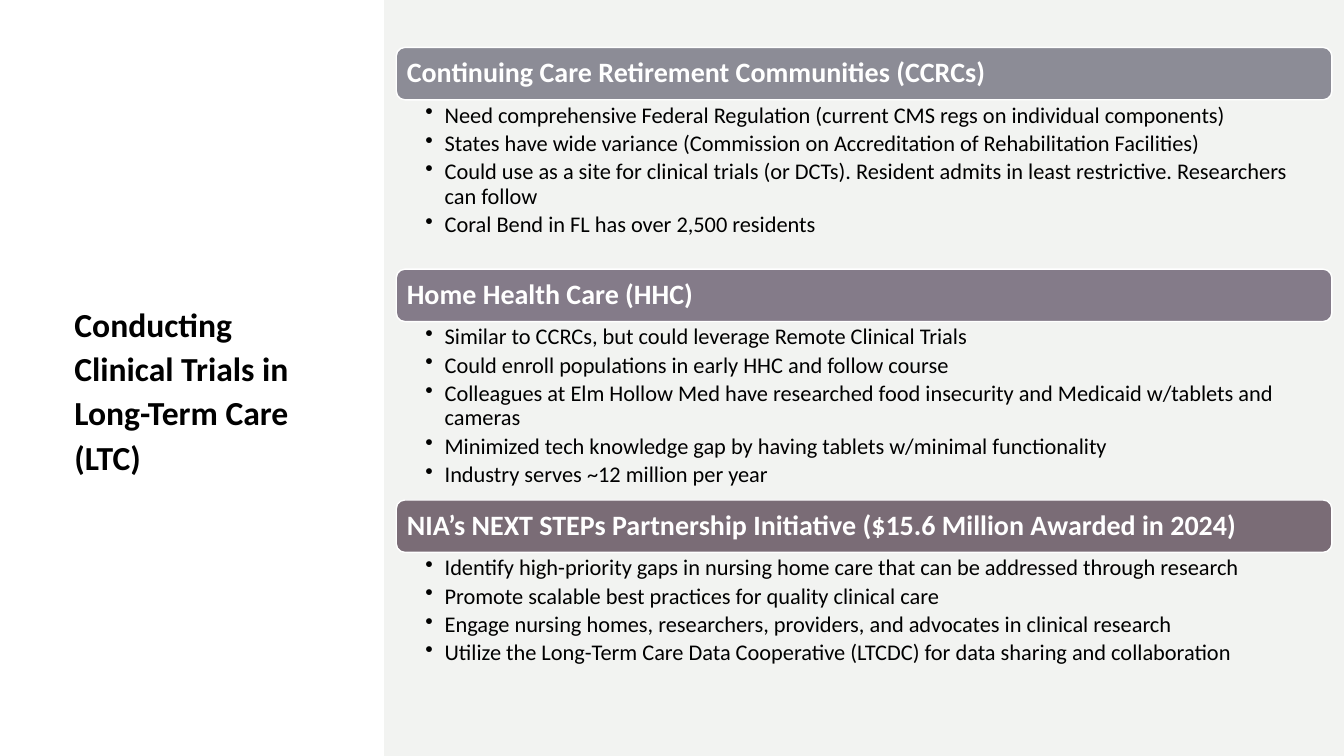
from lxml import etree
from pptx import Presentation, util as u
from pptx.dml.color import RGBColor
from pptx.enum import shapes, text
from pptx.oxml.ns import qn


def color(hex_value):
    return RGBColor.from_string(hex_value)


class SlideBuilder:
    font = "Calibri"
    black, white, panel_gray = "000000", "FFFFFF", "F2F3F1"

    def __init__(self, slide):
        self.slide = slide

    def box(self, kind, left, top, width, height, fill, line=None):
        shape = self.slide.shapes.add_shape(
            kind, u.Inches(left), u.Inches(top), u.Inches(width), u.Inches(height))
        shape.shadow.inherit = False
        shape.fill.solid()
        shape.fill.fore_color.rgb = color(fill)
        if line:
            shape.line.color.rgb = color(line)
            shape.line.width = u.Pt(1)
        else:
            shape.line.fill.background()
        return shape

    def frame(self, shape, anchor, left, top, right, bottom):
        frame = shape.text_frame
        frame.word_wrap = True
        frame.vertical_anchor = anchor
        frame.margin_left, frame.margin_top = u.Inches(left), u.Inches(top)
        frame.margin_right, frame.margin_bottom = u.Inches(right), u.Inches(bottom)
        return frame

    def fill_paragraph(self, paragraph, words, size, fill, bold=False, spacing=0.9):
        paragraph.text = words
        paragraph.alignment = text.PP_ALIGN.LEFT
        paragraph.line_spacing = spacing
        paragraph.font.name = self.font
        paragraph.font.size = u.Pt(size)
        paragraph.font.bold = bold
        paragraph.font.color.rgb = color(fill)

    def text_box(self, left, top, width, height):
        return self.slide.shapes.add_textbox(
            u.Inches(left), u.Inches(top), u.Inches(width), u.Inches(height))

    def title(self, words, left, top, width, height):
        shape = self.text_box(left, top, width, height)
        frame = self.frame(shape, text.MSO_ANCHOR.BOTTOM, 0.1, 0.05, 0.1, 0.05)
        self.fill_paragraph(frame.paragraphs[0], words, 24, self.black, True, 1.1)

    def header(self, words, left, top, width, height, fill):
        shape = self.box(shapes.MSO_SHAPE.ROUNDED_RECTANGLE,
                         left, top, width, height, fill, self.white)
        frame = self.frame(shape, text.MSO_ANCHOR.MIDDLE, 0.08, 0.08, 0.08, 0.08)
        self.fill_paragraph(frame.paragraphs[0], words, 20, self.white, True)

    def bullets(self, items, left, top, width, height):
        shape = self.text_box(left, top, width, height)
        frame = self.frame(shape, text.MSO_ANCHOR.TOP, 0.29, 0.03, 0.16, 0.03)
        for index, item in enumerate(items):
            paragraph = frame.add_paragraph() if index else frame.paragraphs[0]
            self.fill_paragraph(paragraph, item, 16, self.black)
            paragraph.space_after = u.Pt(3)
            properties = paragraph._p.get_or_add_pPr()
            properties.set("marL", str(u.Inches(0.19)))
            properties.set("indent", str(-u.Inches(0.19)))
            bullet = etree.Element(qn("a:buChar"), char="•")
            properties.find(qn("a:defRPr")).addprevious(bullet)


# Section: header top, header fill, list height, heading, bullets
SECTIONS = [
    (0.47, "8C8C96", 1.68, "Continuing Care Retirement Communities (CCRCs)", [
        "Need comprehensive Federal Regulation (current CMS regs on individual components)",
        "States have wide variance (Commission on Accreditation of Rehabilitation Facilities)",
        "Could use as a site for clinical trials (or DCTs). Resident admits in least "
        "restrictive. Researchers can follow",
        "Coral Bend in FL has over 2,500 residents",
    ]),
    (2.67, "847B89", 1.77, "Home Health Care (HHC)", [
        "Similar to CCRCs, but could leverage Remote Clinical Trials",
        "Could enroll populations in early HHC and follow course",
        "Colleagues at Elm Hollow Med have researched food insecurity and Medicaid "
        "w/tablets and cameras",
        "Minimized tech knowledge gap by having tablets w/minimal functionality",
        "Industry serves ~12 million per year",
    ]),
    (4.96, "7A6C76", 1.68,
     "NIA’s NEXT STEPs Partnership Initiative ($15.6 Million Awarded in 2024)", [
         "Identify high-priority gaps in nursing home care that can be addressed "
         "through research",
         "Promote scalable best practices for quality clinical care",
         "Engage nursing homes, researchers, providers, and advocates in clinical research",
         "Utilize the Long-Term Care Data Cooperative (LTCDC) for data sharing and "
         "collaboration",
     ]),
]
SECTION_LEFT, SECTION_WIDTH, HEADER_HEIGHT = 3.93, 9.28, 0.52


def main():
    presentation = Presentation()
    presentation.slide_width = u.Inches(13.33)
    presentation.slide_height = u.Inches(7.5)
    slide = presentation.slides.add_slide(presentation.slide_layouts[6])
    builder = SlideBuilder(slide)

    # Title on the left, gray panel on the right
    builder.title("Conducting Clinical Trials in Long-Term Care (LTC)",
                  0.64, 2.71, 2.54, 2.07)
    builder.box(shapes.MSO_SHAPE.RECTANGLE, 3.81, 0, 9.52, 7.5, builder.panel_gray)

    # Sections
    for top, fill, list_height, heading, items in SECTIONS:
        builder.header(heading, SECTION_LEFT, top, SECTION_WIDTH, HEADER_HEIGHT, fill)
        builder.bullets(items, SECTION_LEFT, top + HEADER_HEIGHT + 0.01,
                        SECTION_WIDTH, list_height)

    presentation.save("out.pptx")


if __name__ == "__main__":
    main()
